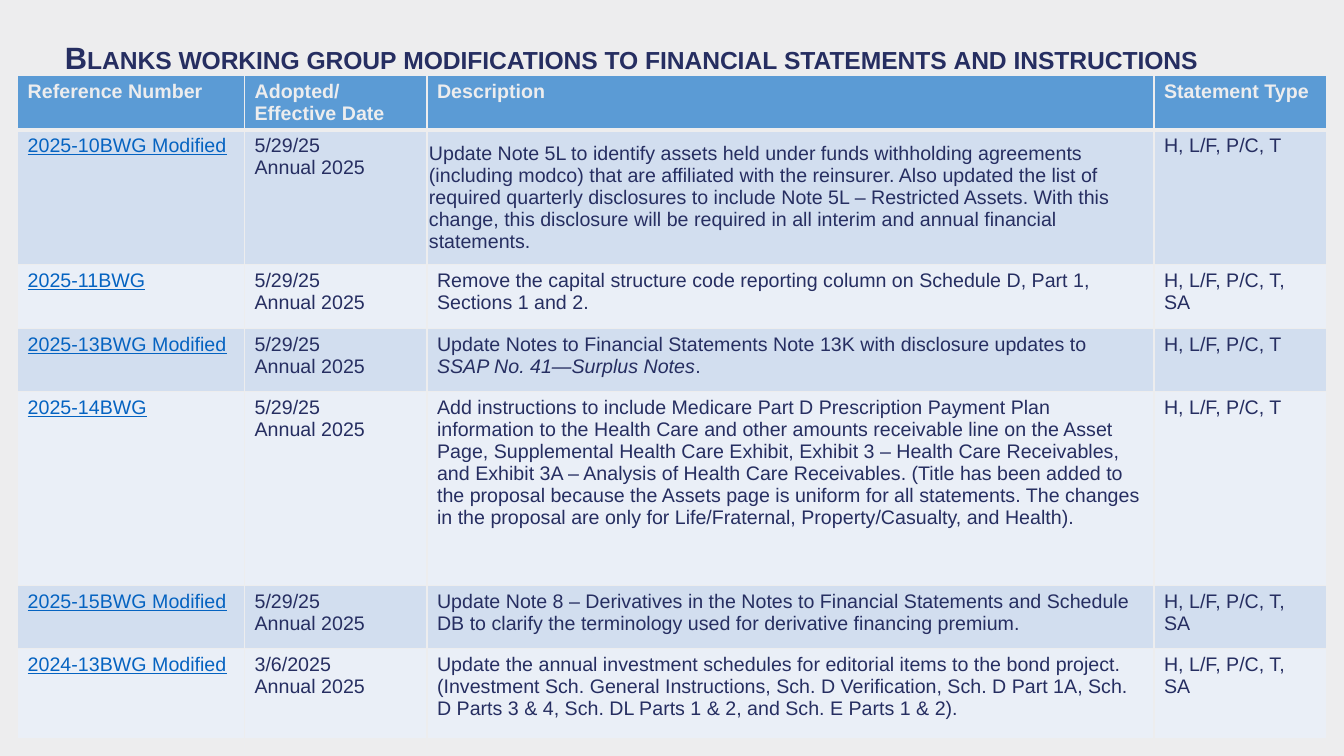
from pptx import Presentation
from pptx.dml.color import RGBColor
from pptx.enum.text import MSO_ANCHOR
from pptx.oxml import parse_xml
from pptx.oxml.ns import nsdecls
from pptx.util import Inches, Pt

NAVY = RGBColor(0x26, 0x2E, 0x61)
LINK = RGBColor(0x05, 0x63, 0xC1)
PALE = RGBColor(0xED, 0xED, 0xEE)
HEADER = RGBColor(0x5B, 0x9B, 0xD5)
BANDS = [RGBColor(0xEA, 0xEF, 0xF7), RGBColor(0xD2, 0xDE, 0xEF)]

COLS = [2.25, 1.81, 7.21, 1.71]
ROWS = [0.53, 1.34, 0.63, 0.63, 1.92, 0.63, 0.89]
SPRING = "5/29/25\vAnnual 2025"
BASIC = "H, L/F, P/C, T"
WITH_SA = "H, L/F, P/C, T, SA"
CELLS = [
    ("Reference Number", "Adopted/\nEffective Date", "Description", "Statement Type"),
    ("2025-10BWG Modified", SPRING,
     "Update Note 5L to identify assets held under funds withholding agreements "
     "(including modco) that are affiliated with the reinsurer. Also updated the list of "
     "required quarterly disclosures to include Note 5L – Restricted Assets. With this "
     "change, this disclosure will be required in all interim and annual financial "
     "statements.", BASIC),
    ("2025-11BWG", SPRING,
     "Remove the capital structure code reporting column on Schedule D, Part 1, "
     "Sections 1 and 2.", WITH_SA),
    ("2025-13BWG Modified", SPRING,
     "Update Notes to Financial Statements Note 13K with disclosure updates to "
     "*SSAP No. 41—Surplus Notes*.", BASIC),
    ("2025-14BWG", SPRING,
     "Add instructions to include Medicare Part D Prescription Payment Plan "
     "information to the Health Care and other amounts receivable line on the Asset "
     "Page, Supplemental Health Care Exhibit, Exhibit 3 – Health Care Receivables, "
     "and Exhibit 3A – Analysis of Health Care Receivables. (Title has been added to "
     "the proposal because the Assets page is uniform for all statements. The changes "
     "in the proposal are only for Life/Fraternal, Property/Casualty, and Health).", BASIC),
    ("2025-15BWG Modified", SPRING,
     "Update Note 8 – Derivatives in the Notes to Financial Statements and Schedule "
     "DB to clarify the terminology used for derivative financing premium.", WITH_SA),
    ("2024-13BWG Modified", "3/6/2025\nAnnual 2025",
     "Update the annual investment schedules for editorial items to the bond project. "
     "(Investment Sch. General Instructions, Sch. D Verification, Sch. D Part 1A, Sch. "
     "D Parts 3 & 4, Sch. DL Parts 1 & 2, and Sch. E Parts 1 & 2).", WITH_SA),
]


def write(tf, text, size=14, color=NAVY, bold=False, underline=False, caps="none", spacing=1.0):
    for i, para in enumerate(text.split("\n")):
        p = tf.add_paragraph() if i else tf.paragraphs[0]
        p.line_spacing = spacing
        for j, line in enumerate(para.split("\v")):
            if j:
                p.add_line_break()
            for k, part in enumerate(line.split("*")):
                r = p.add_run()
                r.text = part
                r.font.name = "Arial"
                r.font.size = Pt(size)
                r.font.color.rgb = color
                r.font.bold = bold
                r.font.italic = k % 2 == 1
                r.font.underline = underline
                r.font._element.set("cap", caps)


prs = Presentation()
prs.slide_width, prs.slide_height = Inches(13.33), Inches(7.5)
W, H = prs.slide_width, prs.slide_height
s = prs.slides.add_slide(prs.slide_layouts[6])
s.background.fill.solid()
s.background.fill.fore_color.rgb = PALE

width, height = Inches(sum(COLS)), Inches(sum(ROWS))
table = s.shapes.add_table(len(ROWS), len(COLS), (W - width) // 2, int(H * 0.1),
                           width, height).table
for column, size in zip(table.columns, COLS):
    column.width = Inches(size)
for row, size in zip(table.rows, ROWS):
    row.height = Inches(size)

for i, texts in enumerate(CELLS):
    for j, text in enumerate(texts):
        cell = table.cell(i, j)
        for side in "LRTB":
            thick = (i, side) in [(0, "B"), (1, "T")]
            cell._tc.get_or_add_tcPr().append(parse_xml(
                f'<a:ln{side} {nsdecls("a")} w="{Pt(3 if thick else 1)}"><a:solidFill>'
                f'<a:srgbClr val="{PALE}"/></a:solidFill></a:ln{side}>'))
        cell.fill.solid()
        cell.fill.fore_color.rgb = BANDS[i % 2] if i else HEADER
        if i == 0:
            write(cell.text_frame, text, color=PALE, bold=True)
        elif j == 0:
            write(cell.text_frame, text, color=LINK, underline=True)
        else:
            write(cell.text_frame, text)

note = table.cell(1, 2)
note.vertical_anchor = MSO_ANCHOR.MIDDLE
note.margin_left = note.margin_right = note.margin_top = note.margin_bottom = Inches(0.02)

sp = s.shapes.add_textbox(int(W * 0.041), int(H * 0.05), int(W * 0.9), int(H * 0.1))
sp.text_frame.word_wrap = True
write(sp.text_frame, "Blanks working group modifications to financial statements and instructions",
      size=22, bold=True, caps="small", spacing=0.9)

prs.save("out.pptx")
